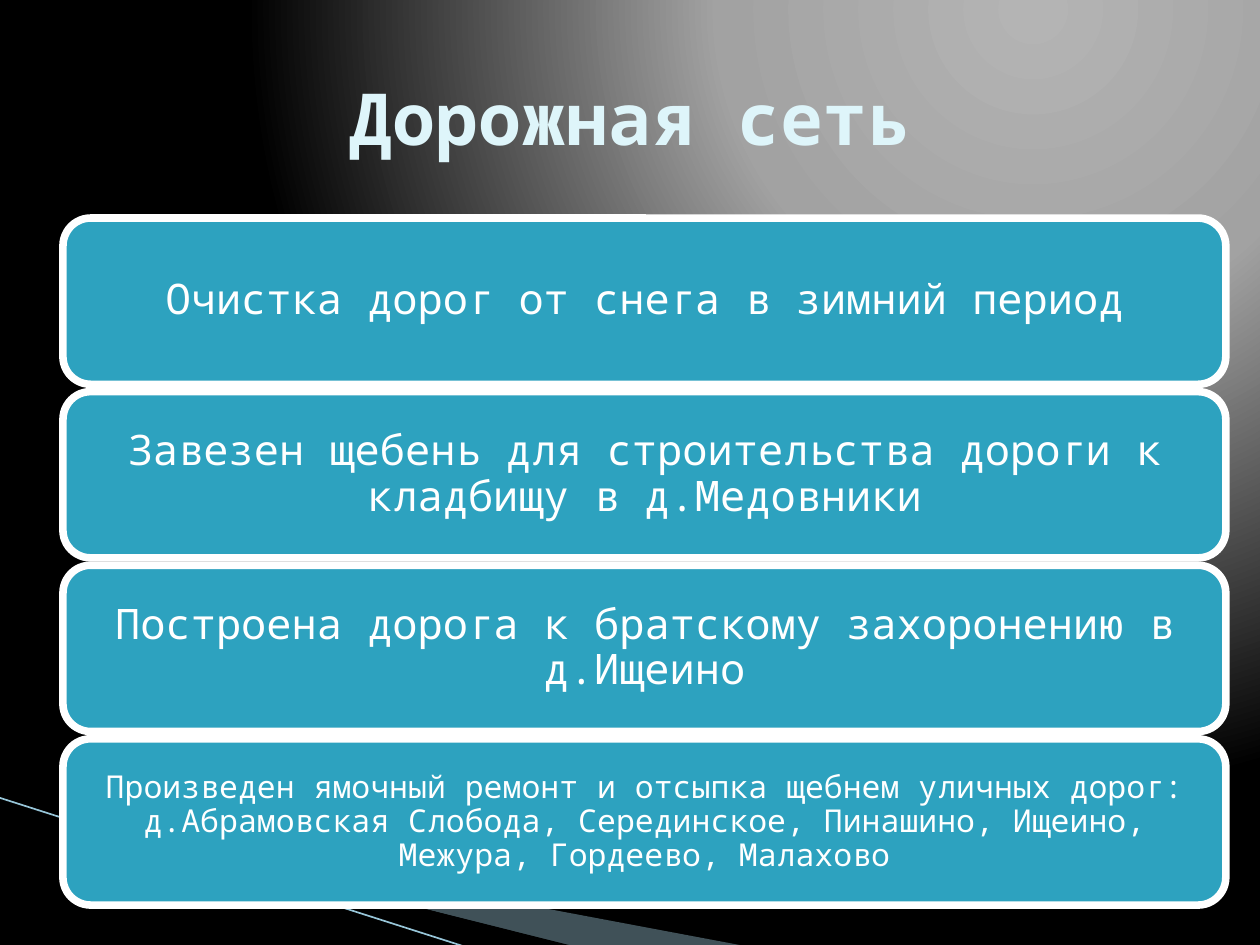
from dataclasses import dataclass

import pptx
import pptx.dml.color
import pptx.enum.shapes
import pptx.enum.text
import pptx.oxml
import pptx.oxml.ns
import pptx.util
from lxml import etree

Pt = pptx.util.Pt
RGBColor = pptx.dml.color.RGBColor
qn = pptx.oxml.ns.qn


@dataclass(frozen=True)
class Theme:
    font: str = "Noto Sans Mono"
    title_size: float = 41
    card_size: float = 24
    small_size: float = 18
    title: str = "DEF5FA"
    text: str = "FFFFFF"
    card: str = "2DA2BF"
    border: str = "FFFFFF"
    band: str = "A0CBDC"
    band_opacity: int = 40
    band_shade: str = "000000"
    line: str = "97C5D8"
    background: tuple = ((0, "B4B4B4"), (40, "A2A2A2"), (100, "000000"))


@dataclass(frozen=True)
class Card:
    text: str
    size: float
    inset: float


THEME = Theme()
CARDS = [
    Card("Очистка дорог от снега в зимний период", THEME.card_size, 7.2),
    Card("Завезен щебень для строительства дороги к кладбищу в д.Медовники",
         THEME.card_size, 7.2),
    Card("Построена дорога к братскому захоронению в д.Ищеино",
         THEME.card_size, 7.2),
    Card("Произведен ямочный ремонт и отсыпка щебнем уличных дорог: "
         "д.Абрамовская Слобода, Серединское, Пинашино, Ищеино, Межура, "
         "Гордеево, Малахово", THEME.small_size, 5.4),
]
CARD_LEFT, CARD_TOP, CARD_WIDTH, CARD_HEIGHT = 36, 124.6, 664.5, 95
CARD_PITCH = 99.2


def set_background(slide) -> None:
    """Fill the background with a circular gradient centred at the upper right."""
    slide.background.fill.gradient()
    gradient = slide.element.find(".//" + qn("a:gradFill"))
    for child in list(gradient):
        gradient.remove(child)
    stops = etree.SubElement(gradient, qn("a:gsLst"))
    for position, color in THEME.background:
        stop = etree.SubElement(stops, qn("a:gs"), pos=str(position * 1000))
        etree.SubElement(stop, qn("a:srgbClr"), val=color)
    circle = etree.SubElement(gradient, qn("a:path"), path="circle")
    etree.SubElement(circle, qn("a:fillToRect"),
                     l="65000", t="0", r="0", b="98000")


def add_band(slide, points: list[tuple[float, float]], color: str,
             opacity: int = 100) -> None:
    builder = slide.shapes.build_freeform(*points[0], scale=Pt(1))
    builder.add_line_segments(points[1:], close=True)
    shape = builder.convert_to_shape()
    shape.shadow.inherit = False
    shape.fill.solid()
    shape.fill.fore_color.rgb = RGBColor.from_string(color)
    shape.line.fill.background()
    if opacity < 100:
        color_element = shape.element.spPr.find(
            qn("a:solidFill") + "/" + qn("a:srgbClr"))
        etree.SubElement(color_element, qn("a:alpha"), val=str(opacity * 1000))


def add_line(slide, start: tuple[float, float],
             end: tuple[float, float]) -> None:
    connector = slide.shapes.add_connector(
        pptx.enum.shapes.MSO_CONNECTOR.STRAIGHT,
        *(Pt(value) for value in (*start, *end)))
    connector.line.color.rgb = RGBColor.from_string(THEME.line)
    connector.line.width = Pt(0.95)
    etree.SubElement(connector.element.spPr, qn("a:effectLst"))


def write_text(shape, text: str, size: float, color: str,
               bold: bool = False) -> None:
    frame = shape.text_frame
    frame.word_wrap = True
    frame.vertical_anchor = pptx.enum.text.MSO_ANCHOR.MIDDLE
    paragraph = frame.paragraphs[0]
    paragraph.text = text
    paragraph.alignment = pptx.enum.text.PP_ALIGN.CENTER
    paragraph.font.name = THEME.font
    paragraph.font.size = Pt(size)
    paragraph.font.bold = bold
    paragraph.font.color.rgb = RGBColor.from_string(color)


def add_card(slide, card: Card, top: float) -> None:
    shape = slide.shapes.add_shape(
        pptx.enum.shapes.MSO_SHAPE.ROUNDED_RECTANGLE,
        Pt(CARD_LEFT), Pt(top), Pt(CARD_WIDTH), Pt(CARD_HEIGHT))
    shape.shadow.inherit = False
    shape.fill.solid()
    shape.fill.fore_color.rgb = RGBColor.from_string(THEME.card)
    shape.line.color.rgb = RGBColor.from_string(THEME.border)
    shape.line.width = Pt(4.33)
    write_text(shape, card.text, card.size, THEME.text)
    frame = shape.text_frame
    frame.paragraphs[0].line_spacing = 0.9
    frame.margin_left = frame.margin_right = Pt(card.inset)
    frame.margin_top = frame.margin_bottom = Pt(card.inset)


def main() -> None:
    presentation = pptx.Presentation()
    presentation.slide_width = Pt(720)
    presentation.slide_height = Pt(540)
    slide = presentation.slides.add_slide(presentation.slide_layouts[6])

    # Background and corner decoration
    set_background(slide)
    add_band(slide, [(39.6, 468.5), (428.4, 541), (328.5, 541), (39.6, 468)],
             THEME.band, THEME.band_opacity)
    add_band(slide, [(38, 467.5), (329, 541), (268, 541.5), (39, 468)],
             THEME.band_shade)
    add_line(slide, (-0.5, 455.8), (267, 541.4))

    # Stacked cards
    for index, card in enumerate(CARDS):
        add_card(slide, card, CARD_TOP + index * CARD_PITCH)

    # Title
    title = slide.shapes.add_textbox(Pt(36), Pt(21.6), Pt(648), Pt(90))
    write_text(title, "Дорожная сеть", THEME.title_size, THEME.title, bold=True)

    presentation.save("out.pptx")


if __name__ == "__main__":
    main()
